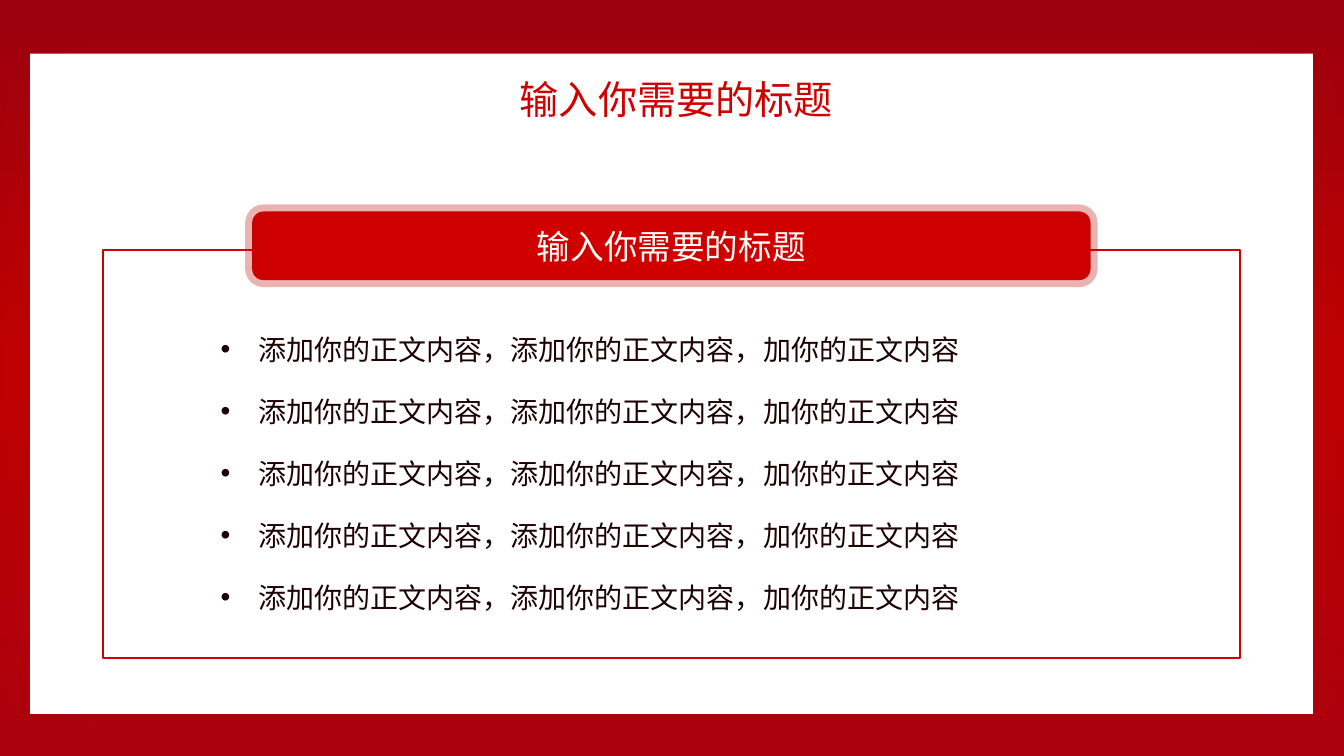
from lxml.etree import SubElement
from pptx import Presentation
from pptx.dml.color import RGBColor
from pptx.enum.shapes import MSO_SHAPE
from pptx.enum.text import MSO_ANCHOR, MSO_AUTO_SIZE, PP_ALIGN
from pptx.oxml import parse_xml
from pptx.oxml.ns import nsdecls, qn
from pptx.util import Cm, Pt

FONT = "Noto Sans CJK SC"
RED = "D00000"
TITLE = "输入你需要的标题"
BULLETS = ["添加你的正文内容，添加你的正文内容，加你的正文内容"] * 5


def color(value):
    return RGBColor.from_string(value)


def set_font(para, size, value):
    para.font.size = Pt(size)
    para.font.color.rgb = color(value)
    para.font.name = FONT
    defaults = para._p.pPr.find(qn("a:defRPr"))
    SubElement(defaults, qn("a:ea")).set("typeface", FONT)


def add_bullet(para, indent):
    properties = para._p.get_or_add_pPr()
    properties.set("marL", str(indent))
    properties.set("indent", str(-indent))
    SubElement(properties, qn("a:buFont")).set("typeface", "Arial")
    SubElement(properties, qn("a:buChar")).set("char", "•")


def add_panel(page, kind, left, top, width, height, fill=None, line=None, weight=0):
    panel = page.shapes.add_shape(kind, Cm(left), Cm(top), Cm(width), Cm(height))
    panel.shadow.inherit = False
    if fill:
        panel.fill.solid()
        panel.fill.fore_color.rgb = color(fill)
    else:
        panel.fill.background()
    if line:
        panel.line.color.rgb = color(line)
        panel.line.width = Pt(weight)
    else:
        panel.line.fill.background()
    return panel


def add_text(page, left, top, width, height, text, wrap):
    box = page.shapes.add_textbox(Cm(left), Cm(top), Cm(width), Cm(height))
    box.text_frame.word_wrap = wrap
    box.text_frame.auto_size = MSO_AUTO_SIZE.SHAPE_TO_FIT_TEXT
    para = box.text_frame.paragraphs[0]
    para.text = text
    return para


def draw_background(page):
    fill = page.background.fill
    fill.gradient()
    fill.gradient_angle = 270
    stops = page.background._cSld.find(".//" + qn("a:gsLst"))
    for stop in list(stops):
        stops.remove(stop)
    for position, value in ((0, "9B000E"), (48, "C00000"), (100, "AC000D")):
        stop = SubElement(stops, qn("a:gs"), pos=str(position * 1000))
        SubElement(stop, qn("a:srgbClr"), val=value)


def draw_sheet(page, left, top, width, height):
    sheet = add_panel(page, MSO_SHAPE.RECTANGLE, left, top, width, height, "FFFFFF")
    # Soft glow around the white sheet
    sheet._element.spPr.find(qn("a:effectLst")).append(parse_xml(
        f'<a:outerShdw {nsdecls("a")} blurRad="{Pt(55)}" dist="0" dir="0" '
        'algn="ctr" rotWithShape="0"><a:srgbClr val="AA1B1A">'
        '<a:alpha val="20000"/></a:srgbClr></a:outerShdw>'))


def draw_banner(page, left, top, width, height):
    banner = add_panel(page, MSO_SHAPE.ROUNDED_RECTANGLE, left, top, width, height,
                       RED, "C00000", 10)
    # Translucent rim
    rim = banner.line._ln.find(".//" + qn("a:srgbClr"))
    SubElement(rim, qn("a:alpha"), val="30000")
    banner.text_frame.vertical_anchor = MSO_ANCHOR.MIDDLE
    para = banner.text_frame.paragraphs[0]
    para.text = TITLE
    para.alignment = PP_ALIGN.CENTER
    set_font(para, 24, "FFFDF8")


def draw_content(page, left, top, width, height):
    # Frame with the banner straddling its top edge
    add_panel(page, MSO_SHAPE.RECTANGLE, left, top, width, height, None, RED, 1.5)
    banner_width, banner_height = 21.13, 1.73
    draw_banner(page, left + (width - banner_width) / 2, top - 0.97,
                banner_width, banner_height)
    # Evenly spaced bullet lines
    for row, text in enumerate(BULLETS):
        para = add_text(page, left + 2.72, top + 1.7 + 1.56 * row,
                        23.22, 1.37, text, True)
        para.line_spacing = 1.3
        add_bullet(para, Cm(0.95))
        set_font(para, 20, "1D0000")


def main():
    deck = Presentation()
    deck.slide_width, deck.slide_height = Cm(33.87), Cm(19.05)
    page = deck.slides.add_slide(deck.slide_layouts[6])
    draw_background(page)
    draw_sheet(page, 0.76, 1.35, 32.33, 16.64)
    draw_content(page, 2.59, 6.3, 28.66, 10.28)
    # Page title
    set_font(add_text(page, 12.85, 1.78, 8.41, 1.45, TITLE, False), 28, RED)
    deck.save("out.pptx")


if __name__ == "__main__":
    main()
